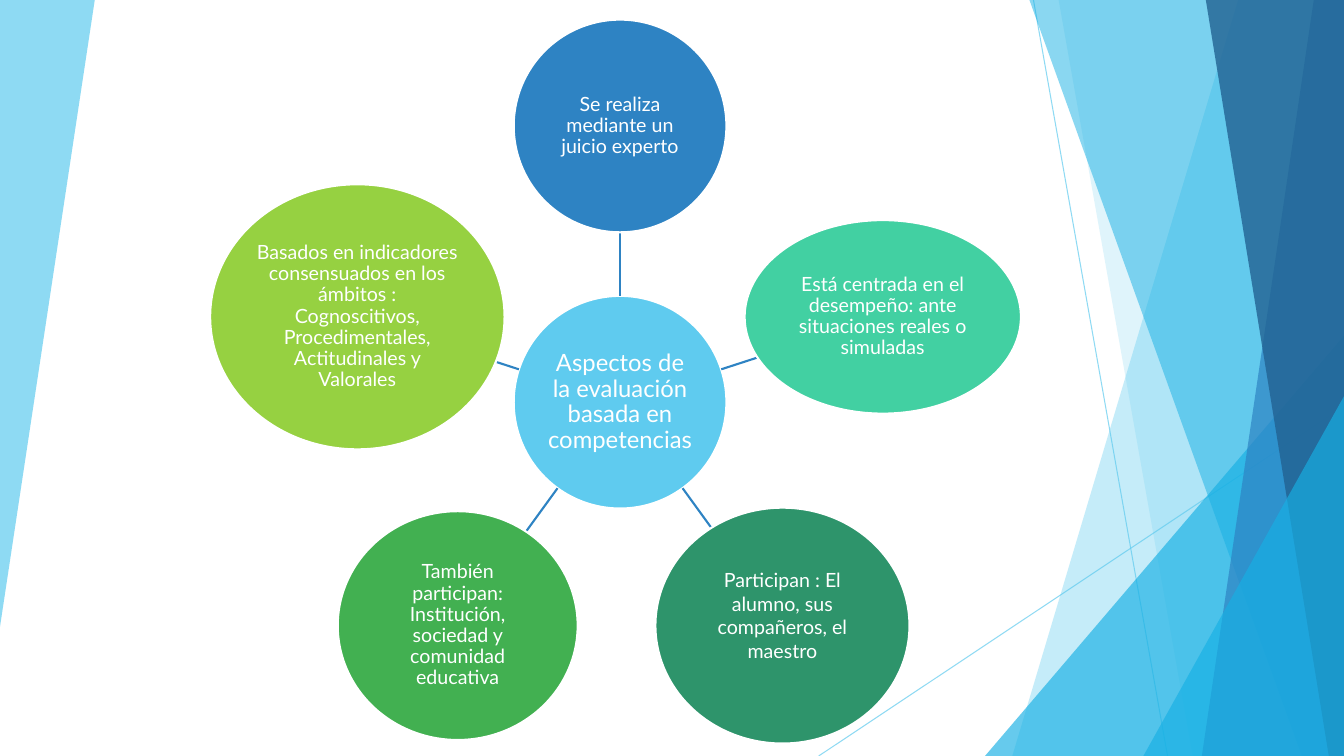
from dataclasses import dataclass
from math import cos, hypot, radians, sin

from lxml.etree import SubElement
from pptx import Presentation
from pptx.dml.color import RGBColor
from pptx.enum.shapes import MSO_CONNECTOR, MSO_SHAPE
from pptx.enum.text import MSO_ANCHOR, PP_ALIGN
from pptx.oxml.ns import qn
from pptx.util import Inches, Pt


@dataclass(frozen=True)
class Theme:
    font: str = "Lato"
    hub_size: float = 17
    topic_size: float = 14
    outline: float = 1.5
    hairline: float = 0.75
    white: str = "FFFFFF"
    sky: str = "5FCBEF"
    cyan: str = "17B0E4"
    blue: str = "2E83C3"
    navy: str = "226292"
    mint: str = "42D0A2"
    teal: str = "2E946B"
    green: str = "42B051"
    lime: str = "96D141"


THEME = Theme()
WIDTH, HEIGHT = 13.33, 7.5
HUB_TEXT = "Aspectos de la evaluación basada en competencias"
TOPICS = [
    ("Se realiza mediante un juicio experto", THEME.blue, 2.11, 2.11, 0.9, 0.01),
    ("Está centrada en el desempeño: ante situaciones reales o simuladas",
     THEME.mint, 2.74, 1.92, 0.9, 0.01),
    ("Participan : El alumno, sus compañeros, el maestro",
     THEME.teal, 2.52, 2.34, 1.0, 0.22),
    ("También participan: Institución, sociedad y comunidad educativa",
     THEME.green, 2.38, 2.27, 0.9, 0.01),
    ("Basados en indicadores consensuados en los ámbitos : Cognoscitivos, "
     "Procedimentales, Actitudinales y Valorales", THEME.lime, 2.92, 2.63, 0.9, 0.01),
]


def set_opacity(shape, percent):
    for color in shape._element.spPr.iter(qn("a:srgbClr")):
        SubElement(color, qn("a:alpha")).set("val", str(percent * 1000))


def paint(shape, color, opacity=100):
    shape.shadow.inherit = False
    shape.fill.solid()
    shape.fill.fore_color.rgb = RGBColor.from_string(color)
    shape.line.fill.background()
    set_opacity(shape, opacity)


def add_line(page, start, end, color, width, opacity=100):
    ends = [Inches(value) for value in (*start, *end)]
    line = page.shapes.add_connector(MSO_CONNECTOR.STRAIGHT, *ends)
    line.line.color.rgb = RGBColor.from_string(color)
    line.line.width = Pt(width)
    SubElement(line._element.spPr, qn("a:effectLst"))
    set_opacity(line, opacity)


def add_facet(page, points, color, opacity):
    corners = [(Inches(x), Inches(y)) for x, y in points]
    builder = page.shapes.build_freeform(*corners[0])
    builder.add_line_segments(corners[1:], close=True)
    paint(builder.convert_to_shape(), color, opacity)


def add_corner(page, left, top, right, bottom):
    box = [Inches(value) for value in (left, top, right - left, bottom - top)]
    corner = page.shapes.add_shape(MSO_SHAPE.ISOSCELES_TRIANGLE, *box)
    corner.adjustments[0] = 1
    paint(corner, THEME.cyan, 66)


def add_backdrop(page, right, bottom):
    def add_strip(top_left, bottom_left, color, opacity):
        points = [(top_left, 0), (right, 0), (right, bottom), (bottom_left, bottom)]
        add_facet(page, points, color, opacity)

    add_facet(page, [(0, 0), (0.94, 0), (0, 6.22)], THEME.sky, 70)
    for start, end in [((10.25, 0), (11.58, bottom)), ((right, 4.03), (8.12, bottom))]:
        add_line(page, start, end, THEME.sky, THEME.hairline, 70)
    add_strip(12.28, 10.04, THEME.sky, 36)
    add_strip(10.5, 11.83, THEME.sky, 20)
    add_corner(page, 9.77, 3.33, right, bottom)
    add_strip(10.21, 12.91, THEME.cyan, 50)
    add_strip(13.03, 11.92, THEME.blue, 70)
    add_strip(11.96, 13.18, THEME.navy, 80)
    add_corner(page, 11.34, 3.93, right, bottom)


def add_bubble(page, center, width, height, text, color, size, spacing=0.9, bottom=0.01):
    left, top = center[0] - width / 2, center[1] - height / 2
    box = [Inches(value) for value in (left, top, width, height)]
    bubble = page.shapes.add_shape(MSO_SHAPE.OVAL, *box)
    paint(bubble, color)
    bubble.line.color.rgb = RGBColor.from_string(THEME.white)
    bubble.line.width = Pt(THEME.outline)
    frame = bubble.text_frame
    frame.word_wrap = True
    frame.vertical_anchor = MSO_ANCHOR.MIDDLE
    frame.margin_left = frame.margin_right = frame.margin_top = Inches(0.01)
    frame.margin_bottom = Inches(bottom)
    para = frame.paragraphs[0]
    para.text = text
    para.alignment = PP_ALIGN.CENTER
    para.line_spacing = spacing
    para.font.name = THEME.font
    para.font.size = Pt(size)
    para.font.color.rgb = RGBColor.from_string(THEME.white)


def add_radial_diagram(page, center, orbit, hub_width):
    def at_distance(direction, distance):
        return tuple(c + d * distance for c, d in zip(center, direction))

    add_bubble(page, center, hub_width, hub_width, HUB_TEXT, THEME.sky, THEME.hub_size)
    for index, (text, color, width, height, spacing, bottom) in enumerate(TOPICS):
        angle = radians(index * 360 / len(TOPICS))
        direction = (sin(angle), -cos(angle))
        reach = 1 / hypot(direction[0] * 2 / width, direction[1] * 2 / height)
        add_line(page, at_distance(direction, hub_width / 2),
                 at_distance(direction, orbit - reach), THEME.blue, THEME.outline)
        add_bubble(page, at_distance(direction, orbit), width, height, text, color,
                   THEME.topic_size, spacing, bottom)


def main():
    deck = Presentation()
    deck.slide_width, deck.slide_height = Inches(WIDTH), Inches(HEIGHT)
    page = deck.slides.add_slide(deck.slide_layouts[6])
    add_backdrop(page, WIDTH, HEIGHT)
    add_radial_diagram(page, center=(6.15, 3.99), orbit=2.74, hub_width=2.11)
    deck.save("out.pptx")


if __name__ == "__main__":
    main()
